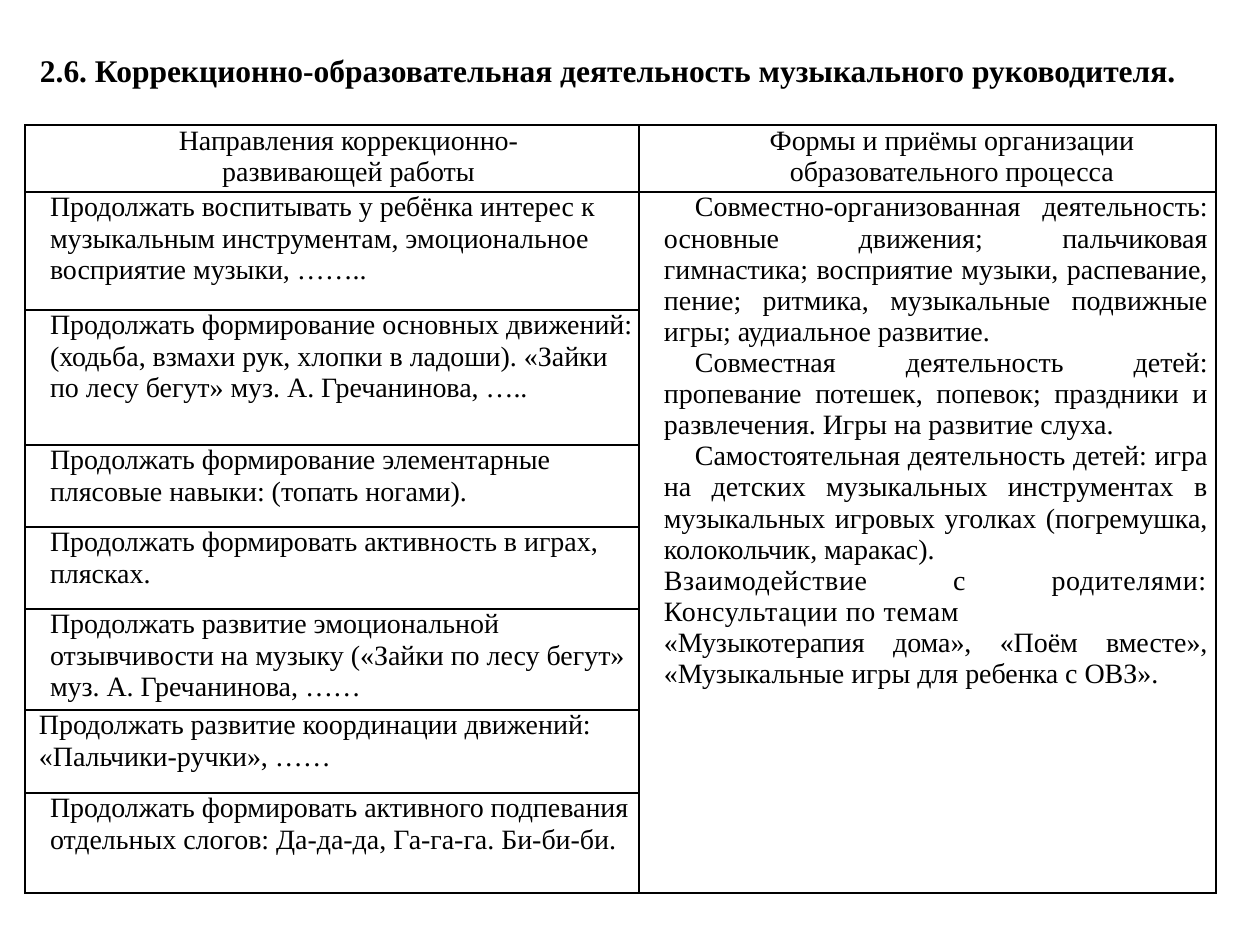
from dataclasses import dataclass

from lxml.etree import SubElement
from pptx import Presentation
from pptx.dml.color import RGBColor
from pptx.enum.text import MSO_ANCHOR, MSO_AUTO_SIZE, PP_ALIGN
from pptx.oxml.ns import qn
from pptx.util import Emu, Pt

BLACK = RGBColor(0, 0, 0)
WHITE = RGBColor(255, 255, 255)
FONT = "Times New Roman"
EMU_PER_PX = 914400 / 126
COLUMN_WIDTHS = (614, 577)
ROW_HEIGHTS = (67, 118, 135, 82, 82, 101, 83, 100)


@dataclass(frozen=True)
class Passage:
    text: str
    align: PP_ALIGN = PP_ALIGN.LEFT
    margin: int = 25
    indent: int = 0
    tracking: int = 0


HEADINGS = (
    Passage("Направления коррекционно-развивающей работы", PP_ALIGN.CENTER, 106),
    Passage("Формы и приёмы организации образовательного процесса", PP_ALIGN.CENTER, 49),
)
DIRECTIONS = (
    Passage("Продолжать воспитывать у ребёнка интерес к музыкальным инструментам, "
            "эмоциональное восприятие музыки, …….."),
    Passage("Продолжать формирование основных движений: (ходьба, взмахи рук, хлопки в ладоши). "
            "«Зайки по лесу бегут» муз. А. Гречанинова, ….."),
    Passage("Продолжать формирование элементарные плясовые навыки: (топать ногами)."),
    Passage("Продолжать формировать активность в играх, плясках."),
    Passage("Продолжать развитие эмоциональной отзывчивости на музыку "
            "(«Зайки по лесу бегут» муз. А. Гречанинова, ……"),
    Passage("Продолжать развитие координации движений: «Пальчики-ручки», ……", margin=14),
    Passage("Продолжать формировать активного подпевания отдельных слогов: "
            "Да-да-да, Га-га-га. Би-би-би."),
)
FORMS = (
    Passage("Совместно-организованная деятельность: основные движения; пальчиковая гимнастика; "
            "восприятие музыки, распевание, пение; ритмика, музыкальные подвижные игры; "
            "аудиальное развитие.", PP_ALIGN.JUSTIFY, indent=31),
    Passage("Совместная деятельность детей: пропевание потешек, попевок; праздники и развлечения. "
            "Игры на развитие слуха.", PP_ALIGN.JUSTIFY, indent=31),
    Passage("Самостоятельная деятельность детей: игра на детских музыкальных инструментах "
            "в музыкальных игровых уголках (погремушка, колокольчик, маракас).",
            PP_ALIGN.JUSTIFY, indent=31),
    Passage("Взаимодействие с родителями: Консультации по темам", PP_ALIGN.JUSTIFY, tracking=40),
    Passage("«Музыкотерапия дома», «Поём вместе», «Музыкальные игры для ребенка с ОВЗ».",
            PP_ALIGN.JUSTIFY),
)


def px(length: int) -> Emu:
    return Emu(round(length * EMU_PER_PX))


def format_run(run, size: int, bold: bool = False) -> None:
    run.font.name = FONT
    run.font.size = Pt(size)
    run.font.bold = bold
    run.font.color.rgb = BLACK


def style_cell(cell, right_margin: int) -> None:
    cell.fill.solid()
    cell.fill.fore_color.rgb = WHITE
    cell.margin_left = cell.margin_top = cell.margin_bottom = 0
    cell.margin_right = px(right_margin)
    properties = cell._tc.get_or_add_tcPr()
    for position, side in enumerate(("lnL", "lnR", "lnT", "lnB")):
        border = SubElement(properties, qn(f"a:{side}"), w=str(Pt(1)))
        ink = SubElement(border, qn("a:solidFill"))
        SubElement(ink, qn("a:srgbClr"), val=str(BLACK))
        properties.insert(position, border)


def write_cell(cell, passages: tuple[Passage, ...]) -> None:
    cell.text_frame.text = "\n".join(passage.text for passage in passages)
    for paragraph, passage in zip(cell.text_frame.paragraphs, passages):
        paragraph.alignment = passage.align
        properties = paragraph._p.get_or_add_pPr()
        properties.set("marL", str(px(passage.margin)))
        properties.set("indent", str(px(passage.indent)))
        for run in paragraph.runs:
            format_run(run, 16)
            if passage.tracking:
                run.font._element.set("spc", str(passage.tracking))


def add_heading(slide) -> None:
    heading = slide.shapes.title
    heading.left, heading.top, heading.width, heading.height = map(px, (0, 45, 1216, 50))
    frame = heading.text_frame
    frame.text = "2.6. Коррекционно-образовательная деятельность музыкального руководителя."
    frame.word_wrap = True
    frame.auto_size = MSO_AUTO_SIZE.NONE
    frame.vertical_anchor = MSO_ANCHOR.MIDDLE
    frame.paragraphs[0].alignment = PP_ALIGN.CENTER
    format_run(frame.paragraphs[0].runs[0], 18, bold=True)


def add_work_table(slide) -> None:
    frame = slide.shapes.add_table(len(ROW_HEIGHTS), len(COLUMN_WIDTHS), px(25), px(125),
                                   px(sum(COLUMN_WIDTHS)), px(sum(ROW_HEIGHTS)))
    table = frame.table
    table.first_row = table.horz_banding = False
    for column, width in zip(table.columns, COLUMN_WIDTHS):
        column.width = px(width)
    for row, height in zip(table.rows, ROW_HEIGHTS):
        row.height = px(height)
    for cell in table.iter_cells():
        style_cell(cell, 0)
    for column, heading in enumerate(HEADINGS):
        write_cell(table.cell(0, column), (heading,))
    for row, direction in enumerate(DIRECTIONS, start=1):
        write_cell(table.cell(row, 0), (direction,))
    table.cell(0, 0).margin_right = px(73)
    forms_cell = table.cell(1, 1)
    forms_cell.merge(table.cell(len(DIRECTIONS), 1))
    forms_cell.margin_right = px(8)
    write_cell(forms_cell, FORMS)


def main() -> None:
    """Build the slide on the music teacher's remedial work."""
    presentation = Presentation()
    presentation.slide_width, presentation.slide_height = px(1260), px(945)
    slide = presentation.slides.add_slide(presentation.slide_layouts[5])
    add_heading(slide)
    add_work_table(slide)
    presentation.save("out.pptx")


if __name__ == "__main__":
    main()
